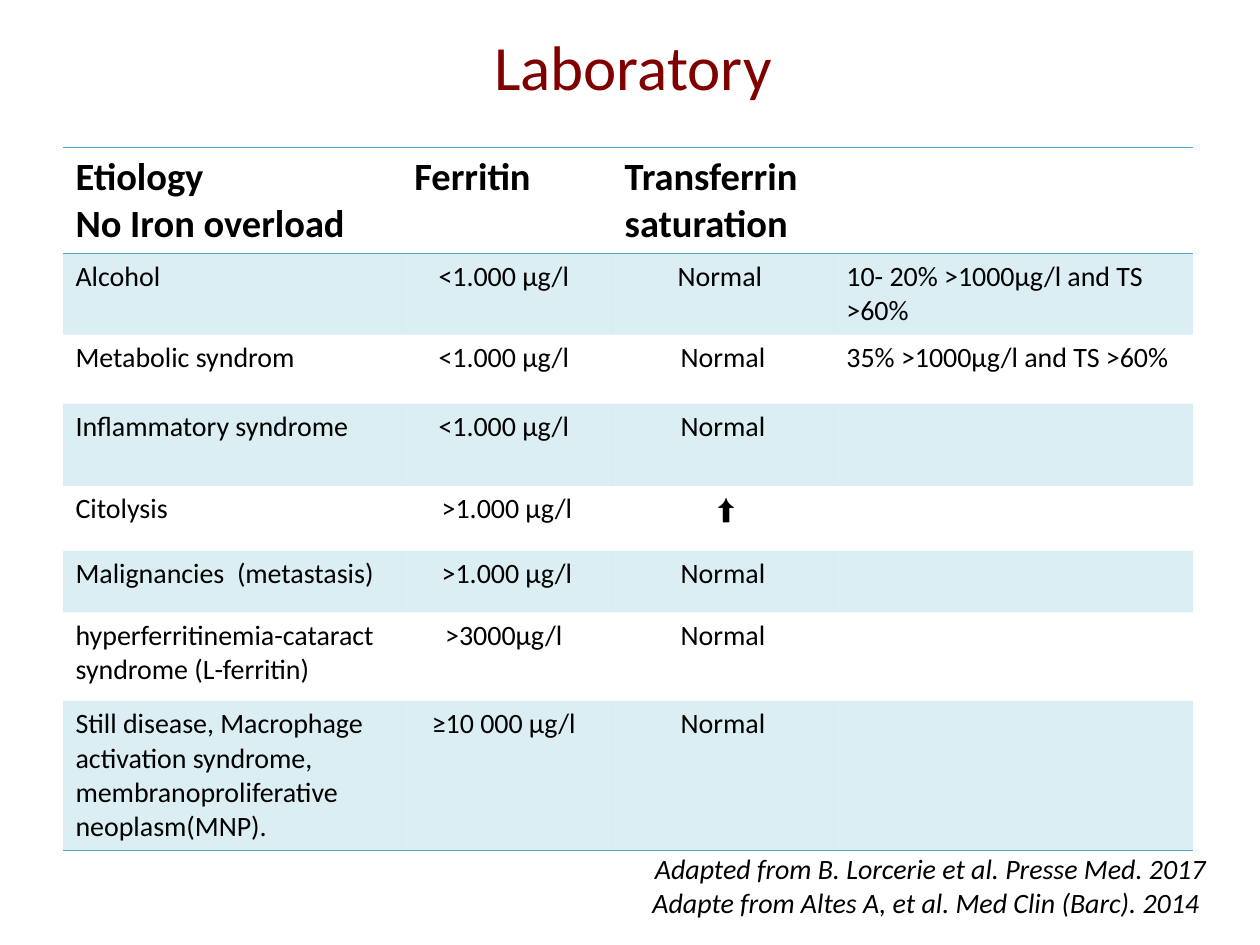
"""Build the laboratory slide on hyperferritinemia without iron overload."""
import lxml.etree
import pptx
import pptx.dml.color
import pptx.enum.text
import pptx.oxml.ns
import pptx.util

Cm = pptx.util.Cm
Pt = pptx.util.Pt
ALIGN = pptx.enum.text.PP_ALIGN
ANCHOR = pptx.enum.text.MSO_ANCHOR
qn = pptx.oxml.ns.qn

FONT = "Calibri"
COLORS = {"title": "800000", "text": "000000", "accent": "4BACC6"}
NO_STYLE = "{2D5ABB26-0587-4C30-8999-92F81FD0307C}"
BAND_ALPHA = 20

TITLE = "Laboratory"
HEADER = (["Etiology", "No Iron overload"], ["Ferritin"], ["Transferrin saturation"], [])
CAUSES = [
    ("Alcohol", "<1.000 μg/l ", "Normal ", "10- 20% >1000μg/l and TS >60%"),
    ("Metabolic syndrom", "<1.000 μg/l ", "Normal", "35% >1000μg/l and TS >60%"),
    ("Inflammatory syndrome", "<1.000 μg/l ", "Normal", ""),
    ("Citolysis", ">1.000 μg/l", " ⬆", ""),
    ("Malignancies  (metastasis)", ">1.000 μg/l", "Normal", ""),
    ("hyperferritinemia-cataract syndrome (L-ferritin)", ">3000μg/l ", "Normal", ""),
    ("Still disease, Macrophage activation syndrome, membranoproliferative neoplasm(MNP).",
     "≥10 000 μg/l ", "Normal", ""),
]
SOURCES = [
    "Adapted from B. Lorcerie et al. Presse Med. 2017",
    "Adapte from Altes A, et al. Med Clin (Barc). 2014 ",
]
COLUMN_WIDTHS = [6.83, 4.24, 4.47, 7.24]
ROW_HEIGHTS = [2.14, 1.63, 1.39, 1.66, 1.31, 1.24, 1.78, 3.01]
COLUMN_ALIGNS = [ALIGN.LEFT, ALIGN.CENTER, ALIGN.CENTER, ALIGN.LEFT]


def write(frame, lines, size, color="text", align=ALIGN.LEFT, bold=False, italic=False):
    for index, line in enumerate(lines):
        para = frame.add_paragraph() if index else frame.paragraphs[0]
        para.alignment = align
        span = para.add_run()
        span.text = line
        span.font.name = FONT
        span.font.size = Pt(size)
        span.font.bold = bold
        span.font.italic = italic
        span.font.color.rgb = pptx.dml.color.RGBColor.from_string(COLORS[color])


def add_color(parent, alpha=None):
    solid = lxml.etree.SubElement(parent, qn("a:solidFill"))
    color = lxml.etree.SubElement(solid, qn("a:srgbClr"), val=COLORS["accent"])
    if alpha is not None:
        lxml.etree.SubElement(color, qn("a:alpha"), val=str(alpha * 1000))


def format_cell(cell, edges, banded):
    properties = cell._tc.get_or_add_tcPr()
    for edge in edges:
        add_color(lxml.etree.SubElement(properties, qn(edge), w=str(Pt(1))))
    if banded:
        add_color(properties, BAND_ALPHA)
    else:
        cell.fill.background()


def add_cause_table(page):
    rows = [HEADER] + [[[text] if text else [] for text in cause] for cause in CAUSES]
    frame = page.shapes.add_table(
        len(rows), len(COLUMN_WIDTHS), Cm(1.27), Cm(2.97),
        Cm(sum(COLUMN_WIDTHS)), Cm(sum(ROW_HEIGHTS)))
    table = frame.table
    table._tbl.tblPr.find(qn("a:tableStyleId")).text = NO_STYLE
    for column, width in zip(table.columns, COLUMN_WIDTHS):
        column.width = Cm(width)
    for row_index, (row, height) in enumerate(zip(rows, ROW_HEIGHTS)):
        table.rows[row_index].height = Cm(height)
        is_header = row_index == 0
        is_last = row_index == len(rows) - 1
        edges = ["a:lnT", "a:lnB"] if is_header else ["a:lnB"] if is_last else []
        for column_index, lines in enumerate(row):
            cell = table.cell(row_index, column_index)
            align = ALIGN.LEFT if is_header else COLUMN_ALIGNS[column_index]
            write(cell.text_frame, lines, 22 if is_header else 16, align=align, bold=is_header)
            format_cell(cell, edges, banded=row_index % 2 == 1)


def main():
    deck = pptx.Presentation()
    deck.slide_width, deck.slide_height = Cm(25.4), Cm(19.05)
    page = deck.slides.add_slide(deck.slide_layouts[5])

    title = page.shapes.title
    title.left, title.top, title.width, title.height = Cm(9.65), Cm(0.43), Cm(6.22), Cm(1.8)
    title.text_frame.word_wrap = False
    title.text_frame.vertical_anchor = ANCHOR.TOP
    write(title.text_frame, [TITLE], 36, "title", ALIGN.CENTER)

    add_cause_table(page)

    box = page.shapes.add_textbox(Cm(12.75), Cm(17.04), Cm(11.81), Cm(1.8))
    box.text_frame.word_wrap = False
    write(box.text_frame, SOURCES, 16, align=ALIGN.RIGHT, italic=True)

    deck.save("out.pptx")


if __name__ == "__main__":
    main()
